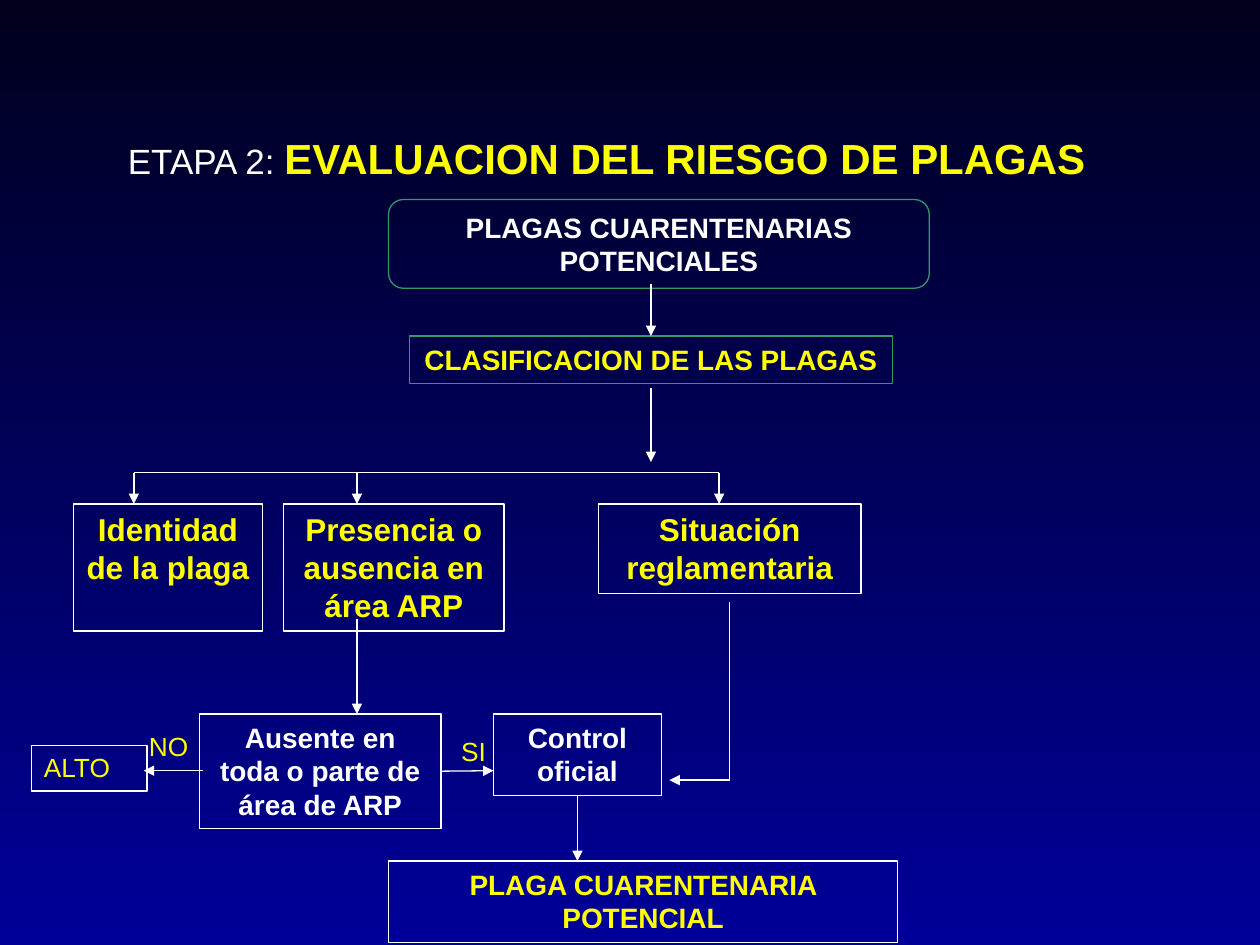
from typing import NamedTuple, Optional

from pptx import Presentation
from pptx.dml.color import RGBColor as Rgb
from pptx.enum.shapes import MSO_CONNECTOR as Conn, MSO_SHAPE as Kind
from pptx.enum.text import MSO_ANCHOR as Anchor, PP_ALIGN as Align
from pptx.oxml.ns import qn
from pptx.util import Inches, Pt
from lxml.etree import SubElement

COLS, ROWS = 120, 90
HUES = {"white": "FFFFFF", "yellow": "FFFF00", "green": "339966",
        "top": "00001C", "base": "000099"}
FONT = "Arial"

deck = Presentation()
deck.slide_width, deck.slide_height = Inches(10), Inches(7.5)
slide = deck.slides.add_slide(deck.slide_layouts[6])


class Box(NamedTuple):
    text: str
    col: float
    row: float
    wide: float
    high: float
    size: int = 16
    hue: str = "yellow"
    edge: str = "white"
    kind: Kind = Kind.RECTANGLE
    bold: bool = True
    align: Align = Align.CENTER


class Note(NamedTuple):
    runs: tuple
    col: float
    row: float
    wide: float
    high: float
    wrap: bool = True


class Line(NamedTuple):
    start: tuple
    end: tuple
    width: float = 0.75
    head: bool = True
    source: Optional[tuple] = None
    goal: Optional[tuple] = None


def tint(name: str) -> Rgb:
    return Rgb.from_string(HUES[name])


def spot(col: float, row: float) -> tuple:
    return (round(deck.slide_width * col / COLS),
            round(deck.slide_height * row / ROWS))


def paint() -> None:
    fill = slide.background.fill
    fill.gradient()
    fill.gradient_angle = 270
    for stop, name, place in zip(fill.gradient_stops, ("top", "base"), (0, 1)):
        stop.color.rgb = tint(name)
        stop.position = place


def draw_box(box: Box):
    shape = slide.shapes.add_shape(
        box.kind, *spot(box.col, box.row), *spot(box.wide, box.high))
    shape.shadow.inherit = False
    shape.fill.background()
    shape.line.color.rgb = tint(box.edge)
    shape.line.width = Pt(0.75)
    frame = shape.text_frame
    frame.word_wrap = True
    frame.vertical_anchor = Anchor.TOP
    para = frame.paragraphs[0]
    para.text = box.text
    para.alignment = box.align
    font = para.font
    font.name, font.size, font.bold = FONT, Pt(box.size), box.bold
    font.color.rgb = tint(box.hue)
    return shape


def draw_note(note: Note) -> None:
    area = slide.shapes.add_textbox(
        *spot(note.col, note.row), *spot(note.wide, note.high))
    area.text_frame.word_wrap = note.wrap
    para = area.text_frame.paragraphs[0]
    para.font.name = FONT
    for text, size, hue, bold in note.runs:
        run = para.add_run()
        run.text = text
        run.font.size, run.font.bold = Pt(size), bold
        run.font.color.rgb = tint(hue)


def draw_line(line: Line, nodes: dict) -> None:
    link = slide.shapes.add_connector(
        Conn.STRAIGHT, *spot(*line.start), *spot(*line.end))
    link.line.color.rgb = tint("white")
    link.line.width = Pt(line.width)
    if line.head:
        SubElement(link.line._get_or_add_ln(), qn("a:tailEnd"), type="triangle")
    SubElement(link._element.spPr, qn("a:effectLst"))
    if line.source:
        name, side = line.source
        link.begin_connect(nodes[name], side)
    if line.goal:
        name, side = line.goal
        link.end_connect(nodes[name], side)


BOXES = {
    "pests": Box("PLAGAS CUARENTENARIAS POTENCIALES", 37, 19, 51.5, 8.45,
                 hue="white", edge="green", kind=Kind.ROUNDED_RECTANGLE),
    "class": Box("CLASIFICACION DE LAS PLAGAS", 39, 32, 46, 4.55, edge="green"),
    "name": Box("Identidad de la plaga", 7, 48, 18, 12.1, 18),
    "area": Box("Presencia o ausencia en área ARP", 27, 48, 21, 12.1, 18),
    "rules": Box("Situación reglamentaria", 57, 48, 25, 8.5, 18),
    "final": Box("PLAGA CUARENTENARIA POTENCIAL", 37, 82, 48.5, 7.75),
    "check": Box("Control oficial", 47, 68, 16, 7.75, hue="white"),
    "absent": Box("Ausente en toda o parte de área de ARP", 19, 68, 23, 10.9,
                  hue="white"),
    "high": Box("ALTO", 3, 71, 11, 4.35, 15, bold=False, align=Align.LEFT),
}

NOTES = (
    Note((("ETAPA 2: ", 20, "white", False),
          ("EVALUACION DEL RIESGO DE PLAGAS", 24, "yellow", True)),
         11, 12, 103, 6),
    Note((("NO", 15, "yellow", False),), 13, 69, 11, 4.2),
    Note((("SI", 15, "yellow", False),), 42.75, 69.4, 4.8, 4.2, False),
)

BAR, TOP = 45, 48
LEFT, MID, RIGHT = 12.75, 34, 68.5
AXIS, FLOW, TURN = 62, 73.4, (69.5, 74.3)
LINES = (
    Line((LEFT, BAR), (RIGHT, BAR), head=False),
    Line((LEFT, BAR), (LEFT, TOP), 1),
    Line((MID, BAR), (MID, TOP)),
    Line((RIGHT, BAR), (RIGHT, TOP), 1),
    Line((MID, 59), (MID, 68)),
    Line((AXIS, 27), (AXIS, 32), goal=("class", 0)),
    Line((AXIS, 37), (AXIS, 44), 1),
    Line((42, FLOW), (47, FLOW), source=("absent", 3)),
    Line((19.3, FLOW), (13.7, FLOW)),
    Line((55, 76), (55, 82), source=("check", 2)),
    Line((69.5, 57.3), TURN, head=False),
    Line(TURN, (63.75, 74.3)),
)


def main() -> None:
    paint()
    nodes = {name: draw_box(box) for name, box in BOXES.items()}
    for note in NOTES:
        draw_note(note)
    for line in LINES:
        draw_line(line, nodes)
    deck.save("out.pptx")


if __name__ == "__main__":
    main()
